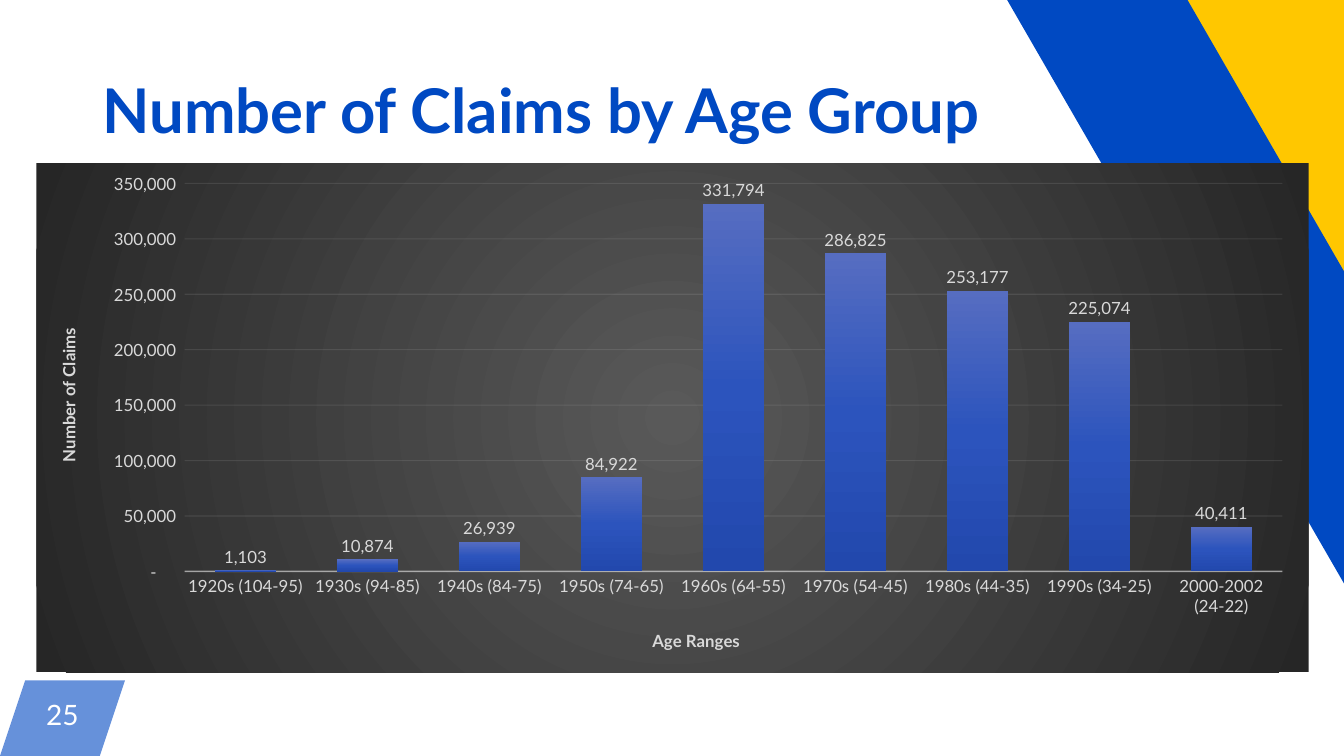
from dataclasses import dataclass

from pptx import Presentation
from pptx import util as u
from pptx.chart import data as cd
from pptx.dml import color
from pptx.enum import chart as ec, shapes, text
from pptx.oxml import ns, parse_xml


@dataclass(frozen=True)
class Theme:
    """Colours, font and type sizes."""
    font: str = "Lato"
    blue: str = "0049C2"
    gold: str = "FFC700"
    white: str = "FFFFFF"
    label: str = "D9D9D9"
    rule: str = "F2F2F2"
    panel: tuple = ((0, "595959"), (100, "262626"))
    bar: tuple = ((0, "566DC1"), (50, "2C54BD"), (100, "2248AD"))
    head: int = 44
    page: int = 20
    small: int = 12


T = Theme()
RGB = color.RGBColor.from_string
MONEY = '_(* #,##0_);_(* \\(#,##0\\);_(* "-"??_);_('
CLAIMS = {
    "1920s (104-95)": 1103,
    "1930s (94-85)": 10874,
    "1940s (84-75)": 26939,
    "1950s (74-65)": 84922,
    "1960s (64-55)": 331794,
    "1970s (54-45)": 286825,
    "1980s (44-35)": 253177,
    "1990s (34-25)": 225074,
    "2000-2002 (24-22)": 40411,
}


def put(obj, **vals):
    """Set each named attribute on an object."""
    for name, val in vals.items():
        setattr(obj, name, val)


def style(font, size, tint, bold=False):
    """Set the theme font with a size and colour."""
    put(font, name=T.font, size=u.Pt(size), bold=bold)
    font.color.rgb = RGB(tint)


def fade(node, share):
    """Give the colours inside a node an opacity in percent."""
    for tint in node.iter(ns.qn("a:srgbClr")):
        tint.append(parse_xml(f'<a:alpha {ns.nsdecls("a")} val="{share * 1000}"/>'))


def blend(stops, kind):
    """Build a gradient fill from its stops and direction."""
    marks = "".join(f'<a:gs pos="{at * 1000}"><a:srgbClr val="{tint}"/></a:gs>'
                    for at, tint in stops)
    return parse_xml(f'<a:gradFill {ns.nsdecls("a")}><a:gsLst>{marks}</a:gsLst>'
                     f'{kind}</a:gradFill>')


def paint(shape, tint):
    """Fill a shape plainly, without line or shadow."""
    shape.shadow.inherit = False
    shape.fill.solid()
    shape.fill.fore_color.rgb = RGB(tint)
    shape.line.fill.background()


def write(slide, box, words, form, space, inset=None, align=None):
    """Place one line of text, centred vertically in its box."""
    frame = slide.shapes.add_textbox(*map(u.Inches, box)).text_frame
    put(frame, word_wrap=True, vertical_anchor=text.MSO_ANCHOR.MIDDLE)
    if inset is not None:
        put(frame, **{f"margin_{side}": u.Inches(inset)
                      for side in ("left", "right", "top", "bottom")})
    para = frame.paragraphs[0]
    put(para, alignment=align, line_spacing=space)
    run = para.add_run()
    run.text = words
    style(run.font, **form)


def corner(slide, box):
    """Draw the slanted gold and blue bands that bleed over the top right corner."""
    left, top = box[:2]
    bands = (
        (T.gold, ((1, 0.98), (2.71, 0), (7.59, 8.51), (5.88, 9.48))),
        (T.blue, ((0, 2.25), (1.34, 1.47), (6.24, 9.97), (4.9, 10.74))),
    )
    for tint, pts in bands:
        spots = [(u.Inches(left + x), u.Inches(top + y)) for x, y in pts]
        pen = slide.shapes.build_freeform(*spots[0])
        pen.add_line_segments(spots[1:])
        paint(pen.convert_to_shape(), tint)


def badge(slide, box, num):
    """Draw the page number on its slanted tab."""
    left, top, wide, high = box
    skew = 0.25
    tab = slide.shapes.add_shape(shapes.MSO_SHAPE.PARALLELOGRAM, *map(u.Inches, box))
    tab.adjustments[0] = skew / high
    paint(tab, T.blue)
    fade(tab.fill._xPr.find(ns.qn("a:solidFill")), 60)
    write(slide, (left + skew, top, wide - 2 * skew, high), num,
          dict(size=T.page, tint=T.white), u.Pt(17.7), 0.04, text.PP_ALIGN.CENTER)


def place(node, box, **spots):
    """Add a manual layout from inches within the chart box."""
    old = node.find(ns.qn("c:layout"))
    if old is not None:
        node.remove(old)
    inner = '<c:layoutTarget val="inner"/>' if "w" in spots else ""
    modes = "".join(f'<c:{key}Mode val="edge"/>' for key in "xy")
    vals = "".join(f'<c:{key} val="{val / box[2 if key in "xw" else 3]}"/>'
                   for key, val in spots.items())
    lay = parse_xml(f'<c:layout {ns.nsdecls("c")}><c:manualLayout>{inner}{modes}{vals}'
                    '</c:manualLayout></c:layout>')
    words = node.find(ns.qn("c:tx"))
    if words is None:
        node.insert(0, lay)
    else:
        words.addnext(lay)


def scale(axis, name, box, x, y):
    """Style an axis and place its title."""
    none = ec.XL_TICK_MARK.NONE
    put(axis, major_tick_mark=none, minor_tick_mark=none)
    style(axis.tick_labels.font, T.small, T.label)
    frame = axis.axis_title.text_frame
    frame.text = name
    style(frame.paragraphs[0].runs[0].font, T.small, T.label, True)
    place(axis.axis_title._element, box, x=x, y=y)


def rule(line, width, node, share):
    """Style a chart line with a faint colour."""
    line.color.rgb = RGB(T.rule)
    line.width = u.Pt(width)
    fade(node.find(ns.qn("c:spPr")), share)


def graph(slide, box):
    """Draw the column chart of claims on its dark panel."""
    data = cd.CategoryChartData(number_format=MONEY)
    data.categories = list(CLAIMS)
    data.add_series("Series 1", list(CLAIMS.values()))
    chart = slide.shapes.add_chart(ec.XL_CHART_TYPE.COLUMN_CLUSTERED,
                                   *map(u.Inches, box), data).chart
    put(chart, has_legend=False, has_title=False)
    style(chart.font, T.small, T.label)

    root = chart._chartSpace
    area = parse_xml(f'<c:spPr {ns.nsdecls("c", "a")}><a:ln><a:noFill/></a:ln></c:spPr>')
    area.insert(0, blend(T.panel, '<a:path path="circle"><a:fillToRect l="50000" '
                         't="50000" r="50000" b="50000"/></a:path>'))
    root.find(ns.qn("c:chart")).addnext(area)
    place(next(root.iter(ns.qn("c:plotArea"))), box, x=1.47, y=0.2, w=10.89, h=3.85)

    cats, vals = chart.category_axis, chart.value_axis
    scale(cats, "Age Ranges", box, 6.08, 4.59)
    scale(vals, "Number of Claims", box, 0.17, 1.6)
    rule(cats.format.line, 1, cats._element, 54)
    put(vals, minimum_scale=0, maximum_scale=350000, major_unit=50000,
        has_major_gridlines=True)
    put(vals.tick_labels, number_format=MONEY, number_format_is_linked=False)
    vals.format.line.fill.background()
    rule(vals.major_gridlines.format.line, 0.75,
         vals._element.find(ns.qn("c:majorGridlines")), 10)

    plot = chart.plots[0]
    put(plot, gap_width=100, overlap=-24, vary_by_categories=False, has_data_labels=True)
    put(plot.data_labels, show_value=True, number_format=MONEY,
        number_format_is_linked=False, position=ec.XL_LABEL_POSITION.OUTSIDE_END)
    style(plot.data_labels.font, T.small, T.label)
    bars = plot.series[0]
    bars.invert_if_negative = False
    bars._element.get_or_add_spPr().append(
        blend(T.bar, '<a:lin ang="5400000" scaled="0"/>'))


def main():
    """Build and save the slide."""
    deck = Presentation()
    put(deck, slide_width=u.Inches(13.33), slide_height=u.Inches(7.5))
    slide = deck.slides.add_slide(deck.slide_layouts[6])
    badge(slide, (0, 6.75, 1.24, 0.75), "25")
    corner(slide, (9.47, -3.15, 7.59, 10.74))
    write(slide, (0.92, 0.4, 11.5, 1.45), "Number of Claims by Age Group",
          dict(size=T.head, tint=T.blue, bold=True), 0.9)
    graph(slide, (0.36, 1.62, 12.62, 5.05))
    deck.save("out.pptx")


if __name__ == "__main__":
    main()
